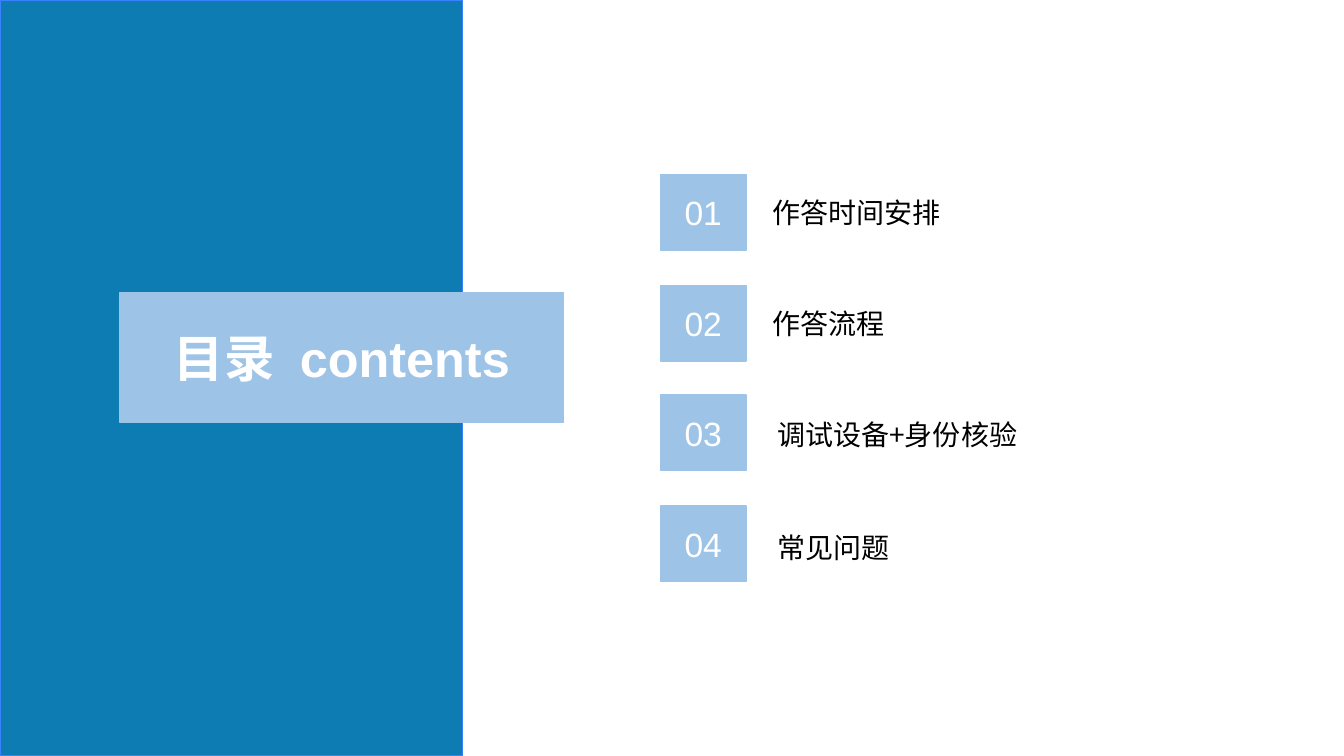
from pptx import Presentation
from pptx.dml.color import RGBColor
from pptx.enum.shapes import MSO_SHAPE as Shape
from pptx.enum.text import MSO_ANCHOR as Anchor, MSO_AUTO_SIZE as AutoSize, PP_ALIGN as Align
from pptx.oxml.ns import qn
from pptx.oxml.xmlchemy import OxmlElement
from pptx.util import Inches, Pt


def color(hex_value):
    return RGBColor.from_string(hex_value)


def write(paragraph, text, size=20, hex_color="000000", bold=False,
          latin="Arial", east_asian="Noto Sans CJK SC", align=Align.LEFT, spacing=0):
    paragraph.alignment = align
    run = paragraph.add_run()
    run.text = text
    font = run.font
    font.size, font.bold, font.name = Pt(size), bold, latin
    font.color.rgb = color(hex_color)
    properties = run._r.get_or_add_rPr()
    typeface = OxmlElement("a:ea")
    typeface.set("typeface", east_asian)
    properties.find(qn("a:latin")).addnext(typeface)
    if spacing:
        properties.set("spc", str(spacing * 100))


class ContentsSlide:
    panel_fill = "0C7CB3"
    panel_line = "3B80FD"
    accent = "9DC3E6"
    white = "FFFFFF"
    sans = "Noto Sans CJK SC"

    def __init__(self, presentation):
        self.slide = presentation.slides.add_slide(presentation.slide_layouts[5])

    def paint(self, shape, fill, line):
        shape.fill.solid()
        shape.fill.fore_color.rgb = color(fill)
        shape.line.color.rgb = color(line)
        shape.line.width = Pt(1)

    def rectangle(self, left, top, width, height, fill, line):
        shape = self.slide.shapes.add_shape(
            Shape.RECTANGLE, Inches(left), Inches(top), Inches(width), Inches(height))
        shape.shadow.inherit = False
        self.paint(shape, fill, line)
        return shape

    def title(self, words, left, top, width, height):
        title = self.slide.shapes.title
        title.left, title.top = Inches(left), Inches(top)
        title.width, title.height = Inches(width), Inches(height)
        self.paint(title, self.accent, self.accent)
        frame = title.text_frame
        frame.auto_size = AutoSize.NONE
        frame.vertical_anchor = Anchor.MIDDLE
        for text, spacing in words:
            write(frame.paragraphs[0], text, size=36, hex_color=self.white,
                  bold=True, align=Align.CENTER, spacing=spacing)
        title._element.getparent().append(title._element)

    def number(self, text, left, top):
        shape = self.rectangle(left, top, 0.85, 0.75, self.accent, self.accent)
        shape.text_frame.vertical_anchor = Anchor.MIDDLE
        write(shape.text_frame.paragraphs[0], text, size=24,
              hex_color=self.white, align=Align.CENTER)

    def label(self, text, left, top, width):
        box = self.slide.shapes.add_textbox(
            Inches(left), Inches(top), Inches(width), Inches(0.44))
        box.text_frame.word_wrap = True
        box.text_frame.auto_size = AutoSize.SHAPE_TO_FIT_TEXT
        write(box.text_frame.paragraphs[0], text, latin=self.sans)


def main():
    presentation = Presentation()
    presentation.slide_width = Inches(13.33)
    presentation.slide_height = Inches(7.5)

    contents = ContentsSlide(presentation)
    contents.rectangle(0, 0, 4.59, 7.5, contents.panel_fill, contents.panel_line)
    contents.title([("目录", 0), (" ", 10), ("contents", 0)], 1.19, 2.9, 4.4, 1.29)

    sections = [
        ("作答时间安排", 7.56, 1.89, 2.93),
        ("作答流程", 7.56, 2.99, 3.26),
        ("调试设备+身份核验", 7.61, 4.09, 2.84),
        ("常见问题", 7.61, 5.21, 1.45),
    ]
    first_top, pitch = 1.73, 1.095
    for index, (text, left, top, width) in enumerate(sections):
        contents.number(f"{index + 1:02}", 6.55, round(first_top + index * pitch, 2))
        contents.label(text, left, top, width)

    presentation.save("out.pptx")


if __name__ == "__main__":
    main()
